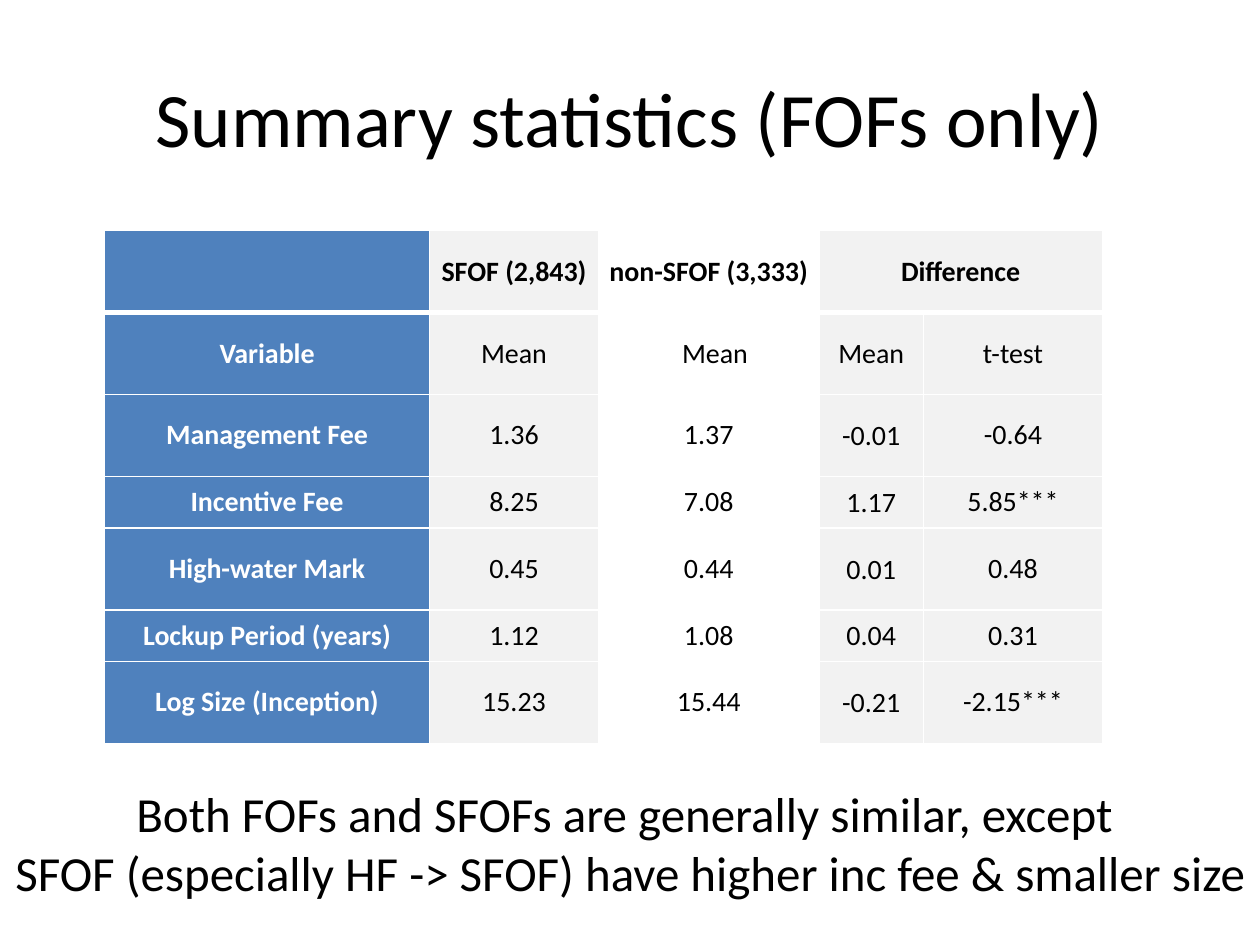
from lxml import etree
from pptx import Presentation
from pptx.dml.color import RGBColor
from pptx.enum.text import MSO_ANCHOR, MSO_AUTO_SIZE, PP_ALIGN
from pptx.oxml.ns import qn
from pptx.util import Inches, Pt

MID = MSO_ANCHOR.MIDDLE
CENTER = PP_ALIGN.CENTER
GROW = MSO_AUTO_SIZE.SHAPE_TO_FIT_TEXT
HEX = {"blue": "4F81BD", "gray": "F2F2F2", "white": "FFFFFF", "black": "000000"}


def write(frame, text, size=16, color="black", bold=False):
    frame.text = text
    for par in frame.paragraphs:
        par.alignment = CENTER
        for run in par.runs:
            run.font.name = "Calibri"
            run.font.size = Pt(size)
            run.font.bold = bold
            run.font.color.rgb = RGBColor.from_string(HEX[color])


def edge(cell, side, width):
    line = etree.SubElement(cell._tc.get_or_add_tcPr(), qn("a:" + side), w=str(Pt(width)))
    fill = etree.SubElement(line, qn("a:solidFill"))
    etree.SubElement(fill, qn("a:srgbClr"), val=HEX["white"])


prs = Presentation()
prs.slide_width = Inches(10)
prs.slide_height = Inches(7.5)
slide = prs.slides.add_slide(prs.slide_layouts[5])

title = slide.shapes.title
title.left, title.top = Inches(0.5), Inches(0.3)
title.width, title.height = Inches(9), Inches(1.25)
title.text_frame.vertical_anchor = MID
write(title.text_frame, "Summary statistics (FOFs only)", size=44)

rows = [
    ["", "SFOF (2,843)", "non-SFOF (3,333)", "Difference", ""],
    ["Variable", "Mean", "Mean", "Mean", "t-test"],
    ["Management Fee", "1.36", "1.37", "-0.01", "-0.64"],
    ["Incentive Fee", "8.25", "7.08", "1.17", "5.85***"],
    ["High-water Mark", "0.45", "0.44", "0.01", "0.48"],
    ["Lockup Period (years)", "1.12", "1.08", "0.04", "0.31"],
    ["Log Size (Inception)", "15.23", "15.44", "-0.21", "-2.15***"],
]
wide = [2.58, 1.34, 1.75, 0.83, 1.42]
high = [0.65, 0.65, 0.65, 0.41, 0.65, 0.41, 0.65]
fills = ["blue", "gray", "white", "gray", "gray"]

table = slide.shapes.add_table(
    len(rows), len(wide), Inches(0.83), Inches(1.83),
    Inches(sum(wide)), Inches(sum(high))).table
table.horz_banding = False
for col, width in zip(table.columns, wide):
    col.width = Inches(width)
for row, height in zip(table.rows, high):
    row.height = Inches(height)

for r, row in enumerate(rows):
    for c, text in enumerate(row):
        cell = table.cell(r, c)
        tight = c == 3 and r > 1
        cell.margin_left = cell.margin_right = Inches(0.01 if tight else 0.07)
        cell.margin_top = Inches(0.01 if tight else 0)
        cell.margin_bottom = 0
        cell.vertical_anchor = MID
        for side in ("lnL", "lnR", "lnT", "lnB"):
            thick = (r, side) in ((0, "lnB"), (1, "lnT"))
            edge(cell, side, 3 if thick else 1)
        cell.fill.solid()
        cell.fill.fore_color.rgb = RGBColor.from_string(HEX[fills[c]])
        write(cell.text_frame, text, color="white" if c == 0 else "black",
              bold=r == 0 or c == 0)
table.cell(1, 2).margin_left = Inches(0.17)
table.cell(0, 3).merge(table.cell(0, 4))

note = slide.shapes.add_textbox(0, Inches(6.17), Inches(10), Inches(1.04)).text_frame
note.word_wrap = True
note.auto_size = GROW
write(note, "Both FOFs and SFOFs are generally similar, except \n"
      "SFOF (especially HF -> SFOF) have higher inc fee & smaller size", size=28)

prs.save("out.pptx")
